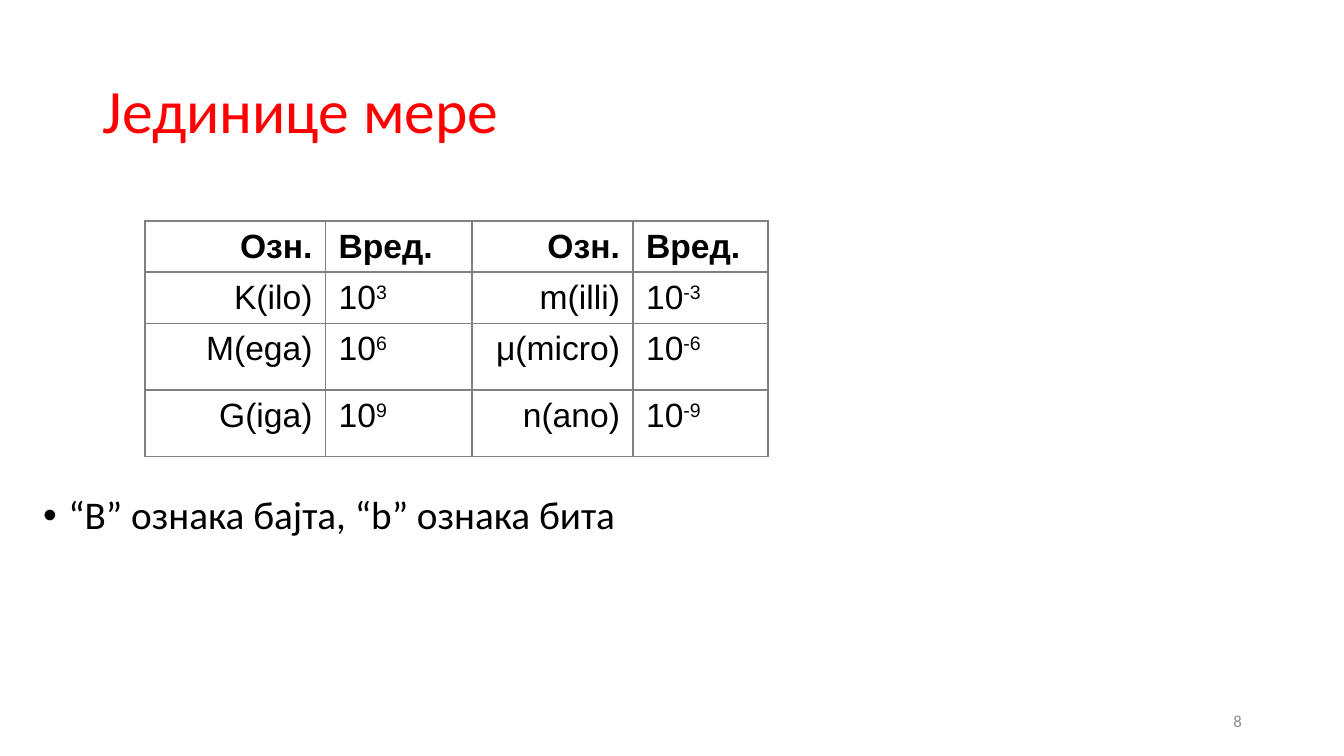
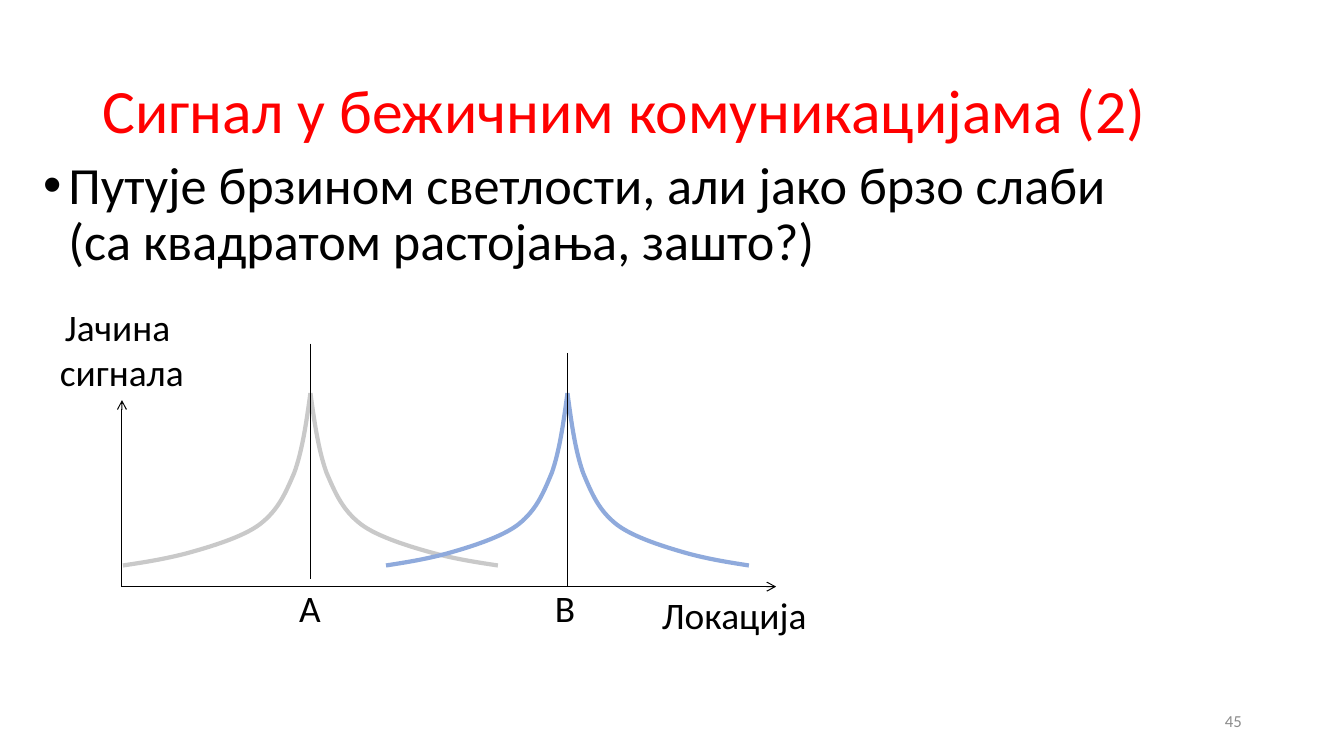
from dataclasses import dataclass

from lxml import etree
from pptx import Presentation
from pptx.dml.color import RGBColor
from pptx.enum.shapes import MSO_CONNECTOR
from pptx.enum.text import MSO_ANCHOR, PP_ALIGN
from pptx.oxml.ns import qn
from pptx.util import Inches, Pt

LEFT, CENTER, RIGHT = PP_ALIGN.LEFT, PP_ALIGN.CENTER, PP_ALIGN.RIGHT
TOP, MIDDLE = MSO_ANCHOR.TOP, MSO_ANCHOR.MIDDLE
STRAIGHT = MSO_CONNECTOR.STRAIGHT
BLANK_LAYOUT = 6


@dataclass(frozen=True)
class Theme:
    font: str = "Calibri"
    table_font: str = "Arial"
    title_color: str = "FF0000"
    text_color: str = "000000"
    number_color: str = "8C8C8C"
    border_color: str = "808080"
    signal_a_color: str = "C9C9C9"
    signal_b_color: str = "8FAADC"
    title_size: float = 44
    bullet_size: float = 28
    large_bullet_size: float = 37.3
    label_size: float = 26.7
    table_size: float = 24
    number_size: float = 12
    axis_width: float = 0.75
    border_width: float = 1.5
    signal_width: float = 3


THEME = Theme()

TABLE_ROWS = (
    ("Озн.", "Вред.", "Озн.", "Вред."),
    ("K(ilo)", ("10", "3"), "m(illi)", ("10", "-3")),
    ("M(ega)", ("10", "6"), "μ(micro)", ("10", "-6")),
    ("G(iga)", ("10", "9"), "n(ano)", ("10", "-9")),
)
COLUMN_WIDTHS = (1.79, 1.45, 1.6, 1.34)
ROW_HEIGHTS = (0.5, 0.5, 0.66, 0.66)

# Signal decay: offsets from the peak, as a start point and cubic control points
DECAY = (
    (0, 0),
    (0.04, 0.29), (0.08, 0.57), (0.16, 0.79),
    (0.25, 1.0), (0.32, 1.16), (0.5, 1.3),
    (0.67, 1.43), (1.01, 1.53), (1.23, 1.59),
    (1.46, 1.65), (1.66, 1.68), (1.86, 1.71),
)

AXIS_X, AXIS_Y = 1.21, 5.82
PEAK_Y = 3.9


# Text
def add_run(paragraph, text, size, color=THEME.text_color, font=THEME.font, bold=False):
    run = paragraph.add_run()
    run.text = text
    run.font.size = Pt(size)
    run.font.name = font
    run.font.bold = bold
    run.font.color.rgb = RGBColor.from_string(color)
    return run


def add_text(slide, box, lines, size, color=THEME.text_color, align=LEFT,
             anchor=TOP, wrap=True):
    shape = slide.shapes.add_textbox(*map(Inches, box))
    frame = shape.text_frame
    frame.word_wrap = wrap
    frame.vertical_anchor = anchor
    paragraph = frame.paragraphs[0]
    paragraph.alignment = align
    for index, line in enumerate(lines):
        if index:
            paragraph.add_line_break()
        add_run(paragraph, line, size, color)
    return paragraph


def add_bullet(slide, box, text, size):
    paragraph = add_text(slide, box, [text], size)
    paragraph.line_spacing = 0.9
    properties = paragraph._p.get_or_add_pPr()
    properties.set("marL", str(Inches(0.25)))
    properties.set("indent", str(Inches(-0.25)))
    etree.SubElement(properties, qn("a:buFont")).set("typeface", "Arial")
    etree.SubElement(properties, qn("a:buChar")).set("char", "•")


def add_label(slide, box, *lines):
    add_text(slide, box, lines, THEME.label_size, align=CENTER, wrap=False)


# Shared slide frame: title and page number
def add_slide(presentation, title, number):
    slide = presentation.slides.add_slide(presentation.slide_layouts[BLANK_LAYOUT])
    paragraph = add_text(slide, (0.92, 0.4, 11.5, 1.45), [title], THEME.title_size,
                         THEME.title_color, anchor=MIDDLE)
    paragraph.line_spacing = 0.9
    add_text(slide, (9.42, 6.95, 3, 0.4), [str(number)], THEME.number_size,
             THEME.number_color, RIGHT, MIDDLE)
    return slide


# Table
def set_borders(cell):
    properties = cell._tc.get_or_add_tcPr()
    for side in ("lnL", "lnR", "lnT", "lnB"):
        line = etree.SubElement(properties, qn(f"a:{side}"))
        line.set("w", str(Pt(THEME.border_width)))
        fill = etree.SubElement(line, qn("a:solidFill"))
        etree.SubElement(fill, qn("a:srgbClr")).set("val", THEME.border_color)


def fill_cell(cell, content, align, bold):
    cell.margin_left = cell.margin_right = Inches(0.13)
    cell.margin_top, cell.margin_bottom = Inches(0.07), Inches(0.04)
    set_borders(cell)
    cell.fill.background()
    paragraph = cell.text_frame.paragraphs[0]
    paragraph.alignment = align
    base, exponent = (content, None) if isinstance(content, str) else content
    style = dict(size=THEME.table_size, font=THEME.table_font, bold=bold)
    add_run(paragraph, base, **style)
    if exponent:
        run = add_run(paragraph, exponent, **style)
        run._r.get_or_add_rPr().set("baseline", "30000")


def add_unit_table(slide, left, top):
    size = (sum(COLUMN_WIDTHS), sum(ROW_HEIGHTS))
    frame = slide.shapes.add_table(len(ROW_HEIGHTS), len(COLUMN_WIDTHS),
                                   *map(Inches, (left, top, *size)))
    table = frame.table
    table.first_row = table.horz_banding = False
    for column, width in zip(table.columns, COLUMN_WIDTHS):
        column.width = Inches(width)
    for row, height in zip(table.rows, ROW_HEIGHTS):
        row.height = Inches(height)
    for row_index, row in enumerate(TABLE_ROWS):
        for column_index, content in enumerate(row):
            fill_cell(table.cell(row_index, column_index), content,
                      LEFT if column_index % 2 else RIGHT, row_index == 0)


# Diagram
def add_line(slide, start, end, arrow=False):
    connector = slide.shapes.add_connector(STRAIGHT, *map(Inches, (*start, *end)))
    connector.line.color.rgb = RGBColor.from_string(THEME.text_color)
    connector.line.width = Pt(THEME.axis_width)
    if arrow:
        line = connector.line._get_or_add_ln()
        etree.SubElement(line, qn("a:tailEnd")).set("type", "arrow")
    etree.SubElement(connector._element.spPr, qn("a:effectLst"))


def bend_segments(shape):
    """Turn each three straight segments into one cubic curve."""
    segments = list(shape._element.iter(qn("a:lnTo")))
    outline = segments[0].getparent()
    for first in range(0, len(segments), 3):
        curve = etree.SubElement(outline, qn("a:cubicBezTo"))
        for segment in segments[first:first + 3]:
            curve.append(segment[0])
            outline.remove(segment)


def add_signal(slide, peak_x, spread, color):
    for direction in (1, -1):
        scale = direction * spread / DECAY[-1][0]
        points = [(Inches(peak_x + x * scale), Inches(PEAK_Y + y)) for x, y in DECAY]
        builder = slide.shapes.build_freeform(*points[0])
        builder.add_line_segments(points[1:], close=False)
        curve = builder.convert_to_shape()
        bend_segments(curve)
        curve.shadow.inherit = False
        curve.fill.background()
        curve.line.color.rgb = RGBColor.from_string(color)
        curve.line.width = Pt(THEME.signal_width)


def add_signal_diagram(slide):
    for end in ((AXIS_X, 3.97), (7.7, AXIS_Y)):
        add_line(slide, (AXIS_X, AXIS_Y), end, arrow=True)
    transmitters = (
        ("A", 3.08, 1.86, THEME.signal_a_color, 3.41, 5.74, 2.87),
        ("B", 5.63, 1.8, THEME.signal_b_color, 3.5, AXIS_Y, 5.4),
    )
    for name, x, spread, color, top, bottom, label_left in transmitters:
        add_signal(slide, x, spread, color)
        add_line(slide, (x, top), (x, bottom))
        add_label(slide, (label_left, 5.76, 0.41, 0.55), name)
    add_label(slide, (0.49, 2.97, 1.44, 1), "Јачина ", "сигнала")
    add_label(slide, (6.46, 5.82, 1.65, 0.55), "Локација")


# Slides
def build_units_slide(presentation):
    slide = add_slide(presentation, "Јединице мере", 8)
    add_unit_table(slide, 1.44, 2.19)
    add_bullet(slide, (0.33, 4.87, 8.33, 0.55), "“B” ознака бајта, “b” ознака бита",
               THEME.bullet_size)


def build_signal_slide(presentation):
    slide = add_slide(presentation, "Сигнал у бежичним комуникацијама (2)", 45)
    add_bullet(slide, (0.33, 1.53, 11.22, 5.22),
               "Путује брзином светлости, али јако брзо слаби "
               "(са квадратом растојања, зашто?)", THEME.large_bullet_size)
    add_signal_diagram(slide)


def main():
    presentation = Presentation()
    presentation.slide_width = Inches(40 / 3)
    presentation.slide_height = Inches(7.5)
    build_units_slide(presentation)
    build_signal_slide(presentation)
    presentation.save("out.pptx")


if __name__ == "__main__":
    main()
